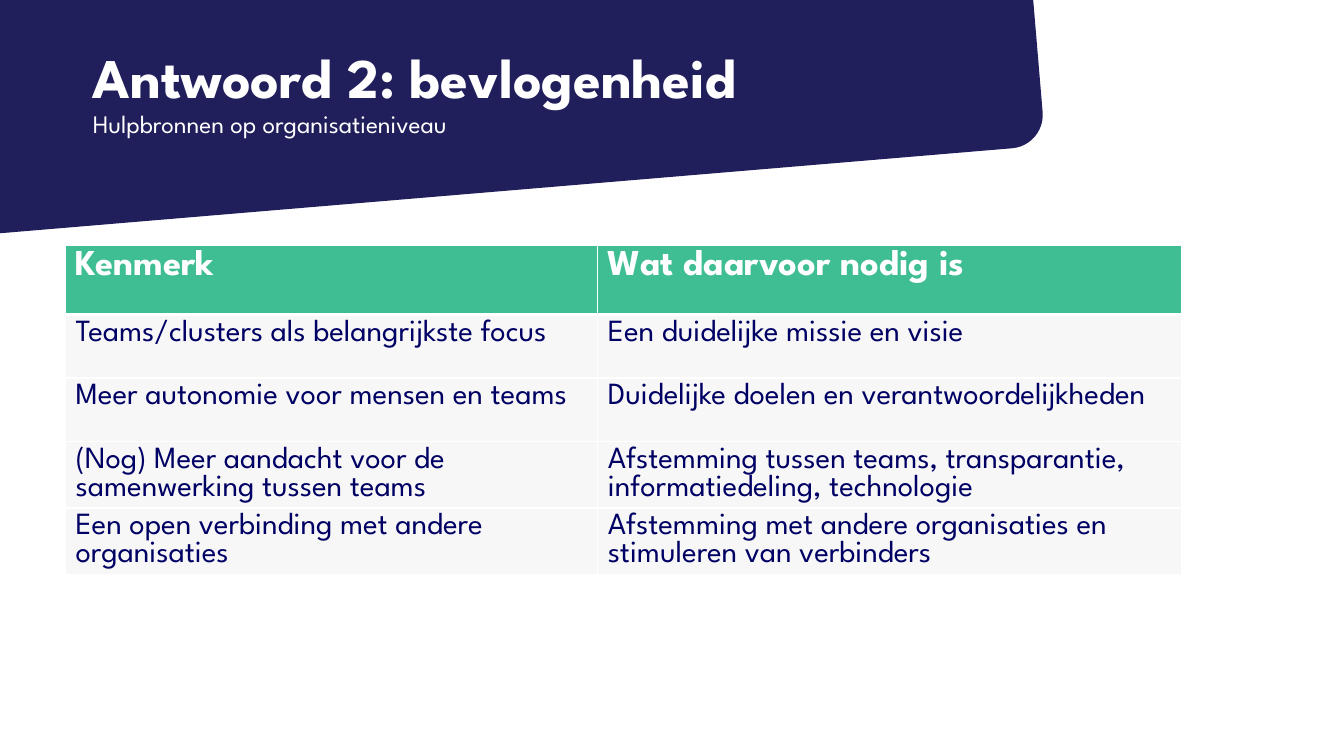
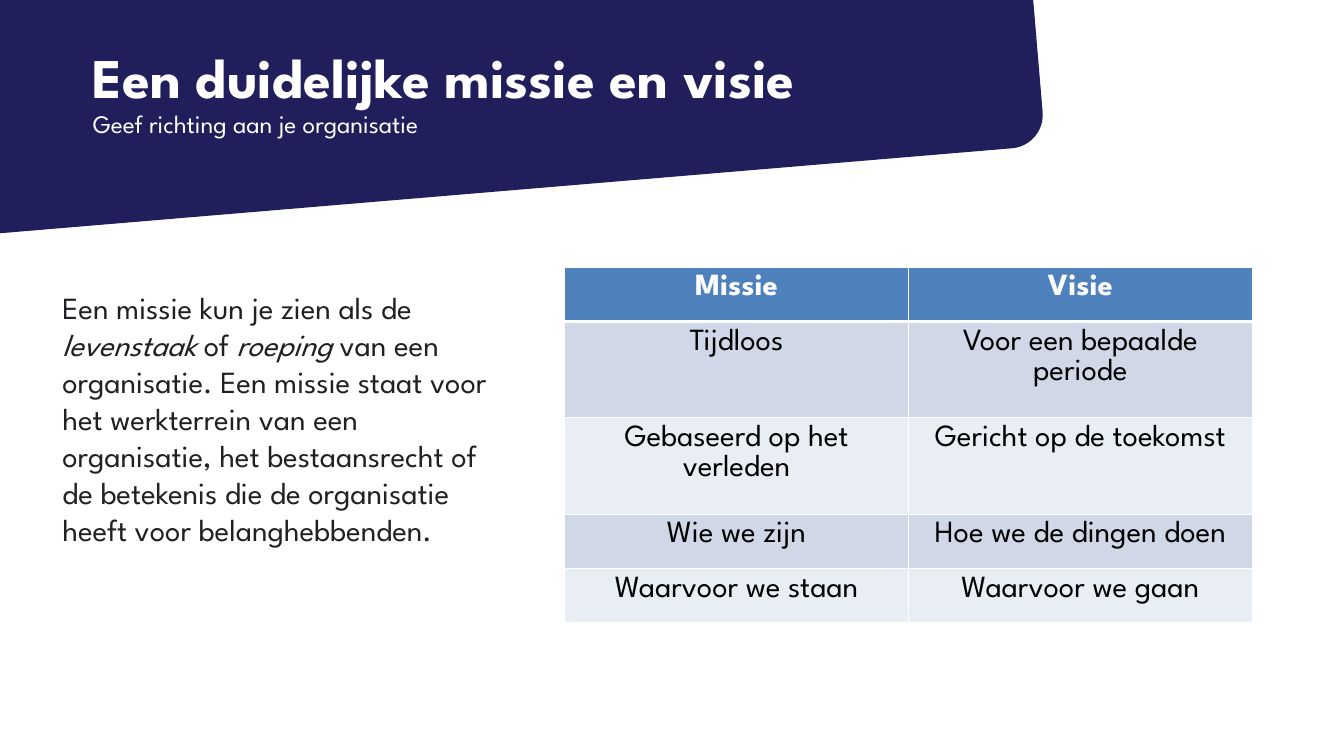
from lxml import etree
from pptx import Presentation
from pptx.dml.color import RGBColor
from pptx.enum.shapes import MSO_SHAPE
from pptx.enum.text import MSO_ANCHOR, MSO_AUTO_SIZE, PP_ALIGN
from pptx.oxml.ns import qn
from pptx.util import Emu, Pt

PX = 9144  # 100 px to the inch
FONT = "League Spartan"
WHITE = RGBColor(0xFF, 0xFF, 0xFF)
BLACK = RGBColor(0x00, 0x00, 0x00)
INDIGO = RGBColor(0x20, 0x1E, 0x5B)
GREEN = RGBColor(0x3F, 0xBD, 0x93)
PALE_GREY = RGBColor(0xF7, 0xF7, 0xF8)
NAVY = RGBColor(0x00, 0x00, 0x64)
BLUE = RGBColor(0x4F, 0x81, 0xBD)
BLUE_BAND = RGBColor(0xD0, 0xD8, 0xE8)
BLUE_LIGHT = RGBColor(0xE9, 0xED, 0xF4)
INK = RGBColor(0x20, 0x21, 0x24)


def style_span(span, size, color, bold=False, italic=False):
    span.font.name = FONT
    span.font.size = Pt(size)
    span.font.color.rgb = color
    span.font.bold = bold
    span.font.italic = italic


def add_grid(page, left, top, columns, heights, rows, header_fill, row_fills,
             header_size, text_color, border, align, spacing):
    """Add a table with a header row, cycling row fills and white rules."""
    frame = page.shapes.add_table(
        len(rows), len(columns), Emu(left * PX), Emu(top * PX),
        Emu(sum(columns) * PX), Emu(sum(heights) * PX))
    table = frame.table
    table.horz_banding = False
    for column, width in zip(table.columns, columns):
        column.width = Emu(width * PX)
    for number, (row, height, texts) in enumerate(zip(table.rows, heights, rows)):
        row.height = Emu(height * PX)
        header = number == 0
        for cell, text in zip(row.cells, texts):
            # Borders go before the fill; the rule under the header is thicker
            properties = cell._tc.get_or_add_tcPr()
            for side in ("lnL", "lnR", "lnT", "lnB"):
                thick = (number, side) in ((0, "lnB"), (1, "lnT"))
                width = Pt(border * 3 if thick else border)
                line = etree.SubElement(properties, qn(f"a:{side}"), w=str(width))
                fill = etree.SubElement(line, qn("a:solidFill"))
                etree.SubElement(fill, qn("a:srgbClr"), val=str(WHITE))
            cell.fill.solid()
            cell.fill.fore_color.rgb = (
                header_fill if header else row_fills[(number - 1) % len(row_fills)])
            cell.text_frame.text = text
            para = cell.text_frame.paragraphs[0]
            para.alignment = align
            para.line_spacing = spacing
            style_span(para.runs[0], header_size if header else 22,
                       WHITE if header else text_color, bold=header)


deck = Presentation()
deck.slide_width = Emu(1333 * PX)
deck.slide_height = Emu(750 * PX)
layout = deck.slide_layouts[1]

# Titles and subtitles
headings = [
    ("Antwoord 2: bevlogenheid", "Hulpbronnen op organisatieniveau"),
    ("Een duidelijke missie en visie", "Geef richting aan je organisatie"),
]
pages = []
for title, subtitle in headings:
    page = deck.slides.add_slide(layout)
    pages.append(page)
    for box, text, top, size, anchor, spacing in (
            (page.shapes.title, title, 36, 40, MSO_ANCHOR.MIDDLE, 1.0),
            (page.placeholders[1], subtitle, 111, 18, MSO_ANCHOR.TOP, 0.9)):
        box.left, box.top = Emu(92 * PX), Emu(top * PX)
        box.width, box.height = Emu(1150 * PX), Emu(79 * PX)
        frame = box.text_frame
        frame.text = text
        frame.word_wrap = True
        frame.auto_size = MSO_AUTO_SIZE.NONE
        frame.vertical_anchor = anchor
        frame.margin_left = frame.margin_right = 0
        frame.margin_top = frame.margin_bottom = 0
        para = frame.paragraphs[0]
        properties = para._p.get_or_add_pPr()
        properties.set("marL", "0")
        properties.set("indent", "0")
        etree.SubElement(properties, qn("a:buNone"))
        para.alignment = PP_ALIGN.LEFT
        para.line_spacing = spacing
        para.space_before = Pt(0)
        style_span(para.runs[0], size, WHITE, bold=size == 40)

# Tilted title band, moved to the layout so that both pages share it
band = pages[0].shapes.add_shape(
    MSO_SHAPE.ROUNDED_RECTANGLE, Emu(-100 * PX), Emu(-92 * PX),
    Emu(1127 * PX), Emu(284 * PX))
band.adjustments[0] = 0.117
band.rotation = 355.2
band.shadow.inherit = False
band.fill.solid()
band.fill.fore_color.rgb = INDIGO
band.line.fill.background()
layout.shapes._spTree.insert(2, band._element)

# Page 1: characteristics and needs
add_grid(
    pages[0], 65, 243, [528, 579], [69, 63, 63, 63, 63],
    [
        ("Kenmerk", "Wat daarvoor nodig is"),
        ("Teams/clusters als belangrijkste focus", "Een duidelijke missie en visie"),
        ("Meer autonomie voor mensen en teams",
         "Duidelijke doelen en verantwoordelijkheden"),
        ("(Nog) Meer aandacht voor de samenwerking tussen teams",
         "Afstemming tussen teams, transparantie, informatiedeling, technologie"),
        ("Een open verbinding met andere organisaties",
         "Afstemming met andere organisaties en stimuleren van verbinders"),
    ],
    header_fill=GREEN, row_fills=[PALE_GREY], header_size=26, text_color=NAVY,
    border=1, align=PP_ALIGN.LEFT, spacing=1.0)

# Page 2: mission against vision
add_grid(
    pages[1], 560, 265, [341, 341], [54, 95, 96, 54, 54],
    [
        ("Missie", "Visie"),
        ("Tijdloos", "Voor een bepaalde periode"),
        ("Gebaseerd op het verleden", "Gericht op de toekomst"),
        ("Wie we zijn", "Hoe we de dingen doen"),
        ("Waarvoor we staan", "Waarvoor we gaan"),
    ],
    header_fill=BLUE, row_fills=[BLUE_BAND, BLUE_LIGHT], header_size=22,
    text_color=BLACK, border=0.81, align=PP_ALIGN.CENTER, spacing=Pt(21.8))

# Page 2: explanation of the mission
box = pages[1].shapes.add_textbox(
    Emu(52 * PX), Emu(282 * PX), Emu(442 * PX), Emu(343 * PX))
box.text_frame.word_wrap = True
para = box.text_frame.paragraphs[0]
para.line_spacing = Pt(26.4)
for text, italic in (
        ("Een missie kun je zien als de ", False),
        ("levenstaak", True),
        (" of ", False),
        ("roeping", True),
        (" van een organisatie. Een missie staat voor het werkterrein van een "
         "organisatie, het bestaansrecht of de betekenis die de organisatie heeft "
         "voor belanghebbenden.", False)):
    span = para.add_run()
    span.text = text
    style_span(span, 22, INK, italic=italic)

deck.save("out.pptx")
